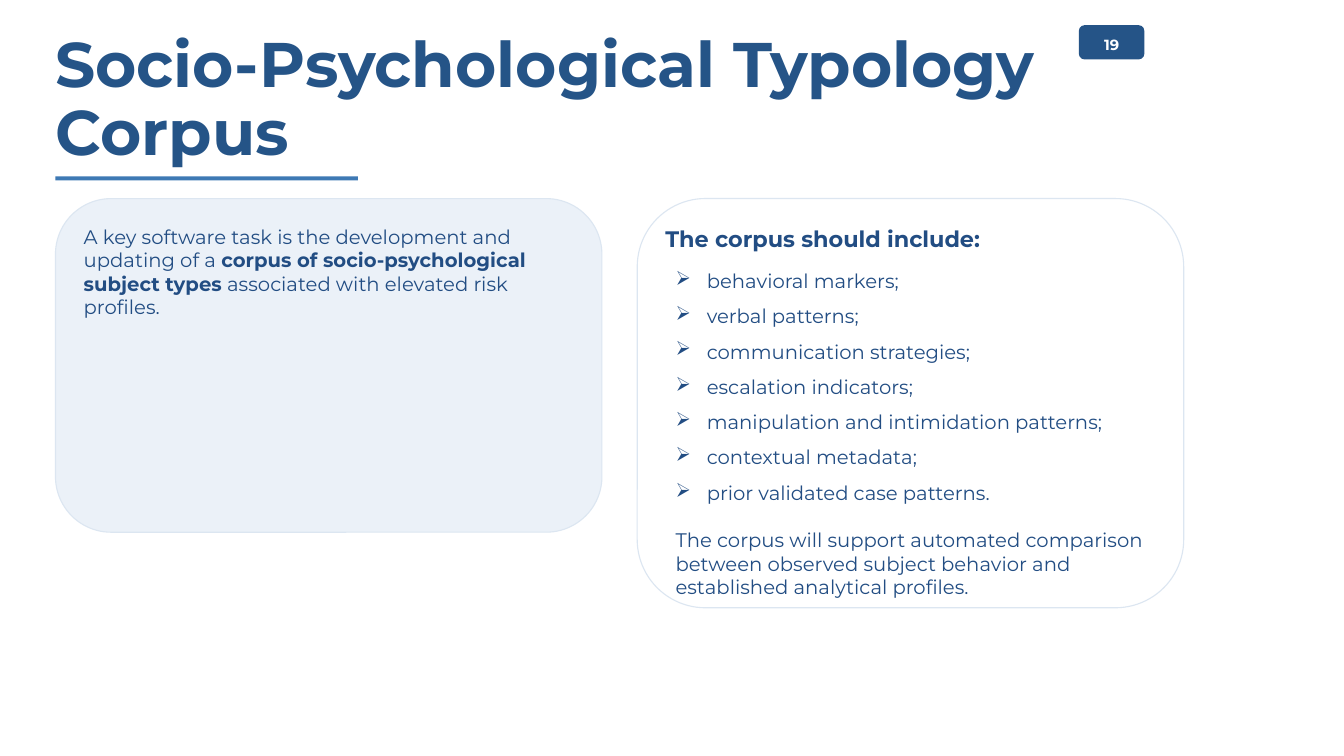
"""Build the slide on the socio-psychological typology corpus."""
from lxml.etree import SubElement
from pptx import Presentation
from pptx.dml.color import RGBColor
from pptx.enum.shapes import MSO_SHAPE as Shape
from pptx.enum.text import MSO_ANCHOR as Anchor, MSO_AUTO_SIZE as AutoSize, PP_ALIGN as Align
from pptx.oxml.ns import qn
from pptx.util import Inches, Pt

FONT = "Montserrat"
NAVY = RGBColor(0x25, 0x54, 0x87)
INK = RGBColor(0x22, 0x4D, 0x83)
BLUE = RGBColor(0x3E, 0x79, 0xB4)
PALE = RGBColor(0xEB, 0xF1, 0xF8)
BORDER = RGBColor(0xDC, 0xE6, 0xF1)
WHITE = RGBColor(0xFF, 0xFF, 0xFF)

LEFT, RIGHT = 0.55, 6.32
PANEL_TOP, PANEL_WIDTH = 1.97, 5.42
PANEL_INSETS = (0.12, 0.08, 0.12, 0.06)
MARKERS = [
    "behavioral markers;",
    "verbal patterns;",
    "communication strategies;",
    "escalation indicators;",
    "manipulation and intimidation patterns;",
    "contextual metadata;",
    "prior validated case patterns.",
]


def set_frame(box, insets, anchor=Anchor.TOP, auto_size=AutoSize.NONE):
    frame = box.text_frame
    frame.word_wrap = True
    frame.auto_size = auto_size
    frame.vertical_anchor = anchor
    (frame.margin_left, frame.margin_top,
     frame.margin_right, frame.margin_bottom) = map(Inches, insets)
    return frame


def write(frame, *spans, size=14, color=INK, bold=False, align=Align.LEFT,
          line=None, before=None, after=0, margin=0, hanging=0, bullet=None):
    """Spans alternate between the given weight and the opposite one."""
    first = frame.paragraphs[0]
    para = frame.add_paragraph() if first.runs else first
    properties = para._p.get_or_add_pPr()
    properties.set("marL", str(Inches(margin)))
    properties.set("indent", str(Inches(-hanging)))
    if bullet:
        SubElement(properties, qn("a:buChar"), char=bullet)
    para.alignment = align
    para.line_spacing = line
    para.space_before = None if before is None else Pt(before)
    para.space_after = Pt(after)
    for index, text in enumerate(spans):
        span = para.add_run()
        span.text = text
        span.font.name = FONT
        span.font.size = Pt(size)
        span.font.color.rgb = color
        span.font.bold = bold != bool(index % 2)


def add_block(page, kind, left, top, width, height, fill, border=None):
    block = page.shapes.add_shape(
        kind, Inches(left), Inches(top), Inches(width), Inches(height))
    block.shadow.inherit = False
    block.fill.solid()
    block.fill.fore_color.rgb = fill
    if border is None:
        block.line.fill.background()
    else:
        block.line.color.rgb = border
        block.line.width = Pt(0.8)


def add_text_box(page, left, top, width, height, insets, **layout):
    box = page.shapes.add_textbox(
        Inches(left), Inches(top), Inches(width), Inches(height))
    return set_frame(box, insets, **layout)


def add_panel(page, left, height, fill, text_height):
    add_block(page, Shape.ROUNDED_RECTANGLE, left, PANEL_TOP, PANEL_WIDTH,
              height, fill, BORDER)
    return add_text_box(page, left + 0.16, PANEL_TOP + 0.18, PANEL_WIDTH - 0.31,
                        text_height, PANEL_INSETS,
                        auto_size=AutoSize.SHAPE_TO_FIT_TEXT)


def add_title(page, text):
    title = page.shapes.title
    title.left, title.top = Inches(LEFT), Inches(0.28)
    title.width, title.height = Inches(9.85), Inches(0.65)
    frame = set_frame(title, (0, 0.05, 0, 0.05))
    write(frame, text, size=45, color=NAVY, bold=True, line=0.9)
    add_block(page, Shape.RECTANGLE, LEFT, 1.75, 3, 0.04, BLUE)


def add_page_number(page, number):
    add_block(page, Shape.ROUNDED_RECTANGLE, 10.7, 0.25, 0.65, 0.34, NAVY)
    frame = add_text_box(page, 10.7, 0.27, 0.65, 0.34,
                         (0.08, 0.04, 0.08, 0.04), anchor=Anchor.MIDDLE)
    write(frame, number, size=10.5, color=WHITE, bold=True, align=Align.CENTER)


def main():
    deck = Presentation()
    deck.slide_width, deck.slide_height = Inches(13.33), Inches(7.5)
    page = deck.slides.add_slide(deck.slide_layouts[5])

    add_title(page, "Socio-Psychological Typology Corpus")
    add_page_number(page, "19")

    task = add_panel(page, LEFT, 3.31, PALE, 0.85)
    write(task, "A key software task is the development and updating of a ",
          "corpus of socio-psychological subject types",
          " associated with elevated risk profiles.", after=2)

    contents = add_panel(page, RIGHT, 4.06, WHITE, 3.88)
    write(contents, "The corpus should include:", size=16, bold=True, after=4)
    for marker in MARKERS:
        write(contents, marker, line=1.5, margin=0.41, hanging=0.31, bullet="➢")
    write(contents, "The corpus will support automated comparison between observed "
          "subject behavior and established analytical profiles.",
          before=17, margin=0.1)

    deck.save("out.pptx")


if __name__ == "__main__":
    main()
